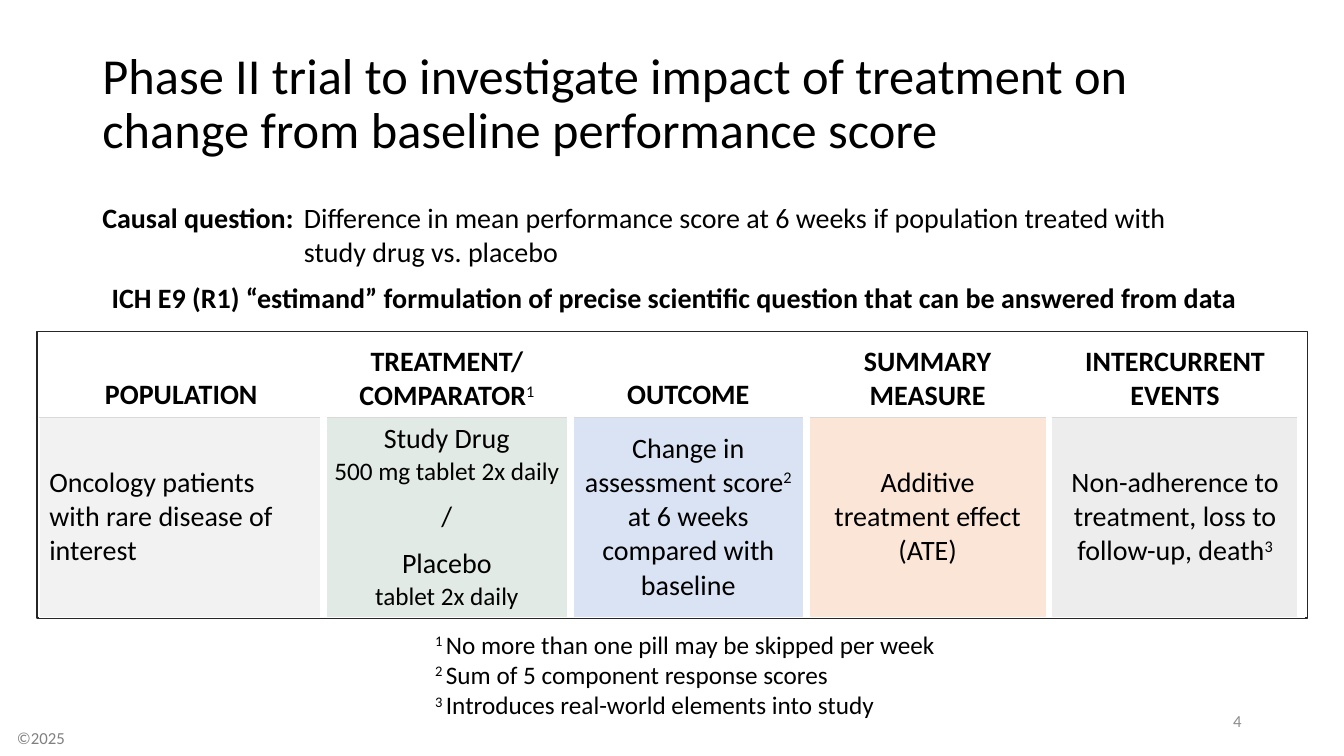
from lxml.etree import SubElement
from pptx import Presentation
from pptx.dml.color import RGBColor
from pptx.enum.shapes import MSO_SHAPE
from pptx.enum.text import MSO_ANCHOR, PP_ALIGN
from pptx.oxml.ns import qn
from pptx.util import Pt

BLACK = RGBColor(0, 0, 0)
WHITE = RGBColor(0xFF, 0xFF, 0xFF)
FRAME_LINE = RGBColor(0x26, 0x26, 0x26)
RULE = RGBColor(0xD9, 0xD9, 0xD9)
COPYRIGHT_GREY = RGBColor(0x80, 0x80, 0x80)
NUMBER_GREY = RGBColor(0x8C, 0x8C, 0x8C)

PLAIN, BOLD, SUPER, SMALL = "plain", "bold", "super", "small"
LEFT, CENTER, RIGHT = PP_ALIGN.LEFT, PP_ALIGN.CENTER, PP_ALIGN.RIGHT

# heading, column width, body fill, body alignment, body paragraphs
ESTIMAND = [
    ([("POPULATION", PLAIN)], 203, RGBColor(0xF2, 0xF2, 0xF2), LEFT,
     [[("Oncology patients\nwith rare disease of interest", PLAIN)]]),
    ([("TREATMENT/\nCOMPARATOR", PLAIN), ("1", SUPER)], 176.4,
     RGBColor(0xE1, 0xEA, 0xE5), CENTER,
     [[("Study Drug\n", PLAIN), ("500 mg tablet 2x daily", SMALL)],
      [("/", PLAIN)],
      [("Placebo\n", PLAIN), ("tablet 2x daily", SMALL)]]),
    ([("OUTCOME", PLAIN)], 168.5, RGBColor(0xDA, 0xE3, 0xF3), CENTER,
     [[("Change in assessment score", PLAIN), ("2", SUPER),
       (" at 6 weeks compared with baseline", PLAIN)]]),
    ([("SUMMARY\nMEASURE", PLAIN)], 173.5, RGBColor(0xFB, 0xE5, 0xD6), CENTER,
     [[("Additive\ntreatment effect\n(ATE)", PLAIN)]]),
    ([("INTERCURRENT EVENTS", PLAIN)], 180, RGBColor(0xED, 0xED, 0xED), CENTER,
     [[("Non-adherence to treatment, loss to follow-up, death", PLAIN),
       ("3", SUPER)]]),
]
FOOTNOTES = [
    "No more than one pill may be skipped per week",
    "Sum of 5 component response scores",
    "Introduces real-world elements into study",
]


def write(frame, paragraphs, size, color=BLACK, bold=False, align=LEFT, gap=0):
    """Fill a text frame with paragraphs, each a list of (text, style) runs."""
    for index, runs in enumerate(paragraphs):
        paragraph = frame.paragraphs[0] if index == 0 else frame.add_paragraph()
        paragraph.alignment = align
        if index and gap:
            paragraph.space_before = Pt(gap)
        font = paragraph.font
        font.name, font.size, font.bold = "Calibri", Pt(size), bold
        font.color.rgb = color
        for text, style in runs:
            for part, line in enumerate(text.split("\n")):
                if part:
                    paragraph.add_line_break()
                if line:
                    style_run(paragraph.add_run(), line, style)


def style_run(run, text, style):
    run.text = text
    if style == BOLD:
        run.font.bold = True
    elif style == SMALL:
        run.font.size = Pt(18)
    elif style == SUPER:
        run.font.bold = False
        run.font._element.set("baseline", "30000")


def add_text(slide, box, paragraphs, size, anchor=MSO_ANCHOR.TOP, **style):
    frame = slide.shapes.add_textbox(*map(Pt, box)).text_frame
    frame.word_wrap = True
    frame.vertical_anchor = anchor
    write(frame, paragraphs, size, **style)
    return frame


def add_title(slide, box, text):
    title = slide.shapes.title
    title.left, title.top, title.width, title.height = map(Pt, box)
    frame = title.text_frame
    frame.vertical_anchor = MSO_ANCHOR.MIDDLE
    write(frame, [[(text, PLAIN)]], 36)
    frame.paragraphs[0].line_spacing = 0.9


def add_causal_question(slide, box):
    frame = add_text(slide, box, [[
        ("Causal question:", BOLD),
        ("\tDifference in mean performance score at 6 weeks if population "
         "treated with\nstudy drug vs. placebo", PLAIN)]], 20)
    properties = frame.paragraphs[0]._p.get_or_add_pPr()
    properties.set("marL", str(Pt(144)))
    properties.set("indent", str(-Pt(144)))


def set_borders(cell, **borders):
    """Draw borders given as side=(color, points), in the order L, R, T, B."""
    properties = cell._tc.get_or_add_tcPr()
    for side, (color, width) in borders.items():
        line = SubElement(properties, qn(f"a:ln{side}"), w=str(Pt(width)))
        fill = SubElement(line, qn("a:solidFill"))
        SubElement(fill, qn("a:srgbClr"), val=str(color))


def fill_cell(cell, fill, anchor, paragraphs, **style):
    cell.fill.solid()
    cell.fill.fore_color.rgb = fill
    cell.vertical_anchor = anchor
    write(cell.text_frame, paragraphs, 20, **style)


def add_estimand_table(slide, box):
    """Framed table: headings above one tinted cell per estimand attribute."""
    left, top, width, height = box
    frame = slide.shapes.add_shape(MSO_SHAPE.RECTANGLE, *map(Pt, box))
    frame.shadow.inherit = False
    frame.fill.solid()
    frame.fill.fore_color.rgb = WHITE
    frame.line.color.rgb = FRAME_LINE
    frame.line.width = Pt(1)

    heading_height, body_height = 55, 143
    table = slide.shapes.add_table(
        2, len(ESTIMAND), Pt(left + 1.4), Pt(top + 5.7), Pt(width - 5.8),
        Pt(heading_height + body_height)).table
    table.first_row = table.horz_banding = False
    table.rows[0].height = Pt(heading_height)
    table.rows[1].height = Pt(body_height)
    last = len(ESTIMAND) - 1
    for column, (heading, column_width, tint, align, body) in enumerate(ESTIMAND):
        table.columns[column].width = Pt(column_width)
        head_cell, body_cell = table.cell(0, column), table.cell(1, column)
        set_borders(head_cell, B=(RULE, 0.75))
        fill_cell(head_cell, WHITE, MSO_ANCHOR.BOTTOM, [heading],
                  bold=True, align=CENTER)
        gaps = {}
        if column > 0:
            gaps["L"] = (WHITE, 4.5 if column == last else 6)
        gaps["R"] = (WHITE, 4.5 if column == last - 1 else 6)
        set_borders(body_cell, **gaps, T=(RULE, 0.75), B=(WHITE, 1))
        fill_cell(body_cell, tint, MSO_ANCHOR.MIDDLE, body, align=align, gap=9)


def add_footnotes(slide, box):
    notes = [[(f"{number} ", SUPER), (note, PLAIN)]
             for number, note in enumerate(FOOTNOTES, 1)]
    add_text(slide, box, notes, 18)


def add_footer(slide, box):
    left, top, width, height = box
    add_text(slide, (left, top + 16, 60, 21.6), [[("©2025", PLAIN)]], 12,
             color=COPYRIGHT_GREY)
    add_text(slide, (left + width - 216, top, 216, 28.8), [[("4", PLAIN)]], 12,
             anchor=MSO_ANCHOR.MIDDLE, color=NUMBER_GREY, align=RIGHT)


def main():
    presentation = Presentation()
    presentation.slide_width, presentation.slide_height = Pt(960), Pt(540)
    slide = presentation.slides.add_slide(presentation.slide_layouts[5])
    add_title(slide, (66, 23, 828, 104.4),
              "Phase II trial to investigate impact of treatment on "
              "change from baseline performance score")
    add_causal_question(slide, (66, 139.7, 800, 55.4))
    add_text(slide, (72.7, 196.6, 830, 31.7), [[
        ("ICH E9 (R1) “estimand” formulation of precise scientific question "
         "that can be answered from data", PLAIN)]], 20, bold=True)
    add_estimand_table(slide, (26.6, 236.9, 907.2, 204.5))
    add_footnotes(slide, (303.8, 445.7, 400, 72.7))
    add_footer(slide, (5, 500.4, 889, 37.6))
    presentation.save("out.pptx")


if __name__ == "__main__":
    main()
